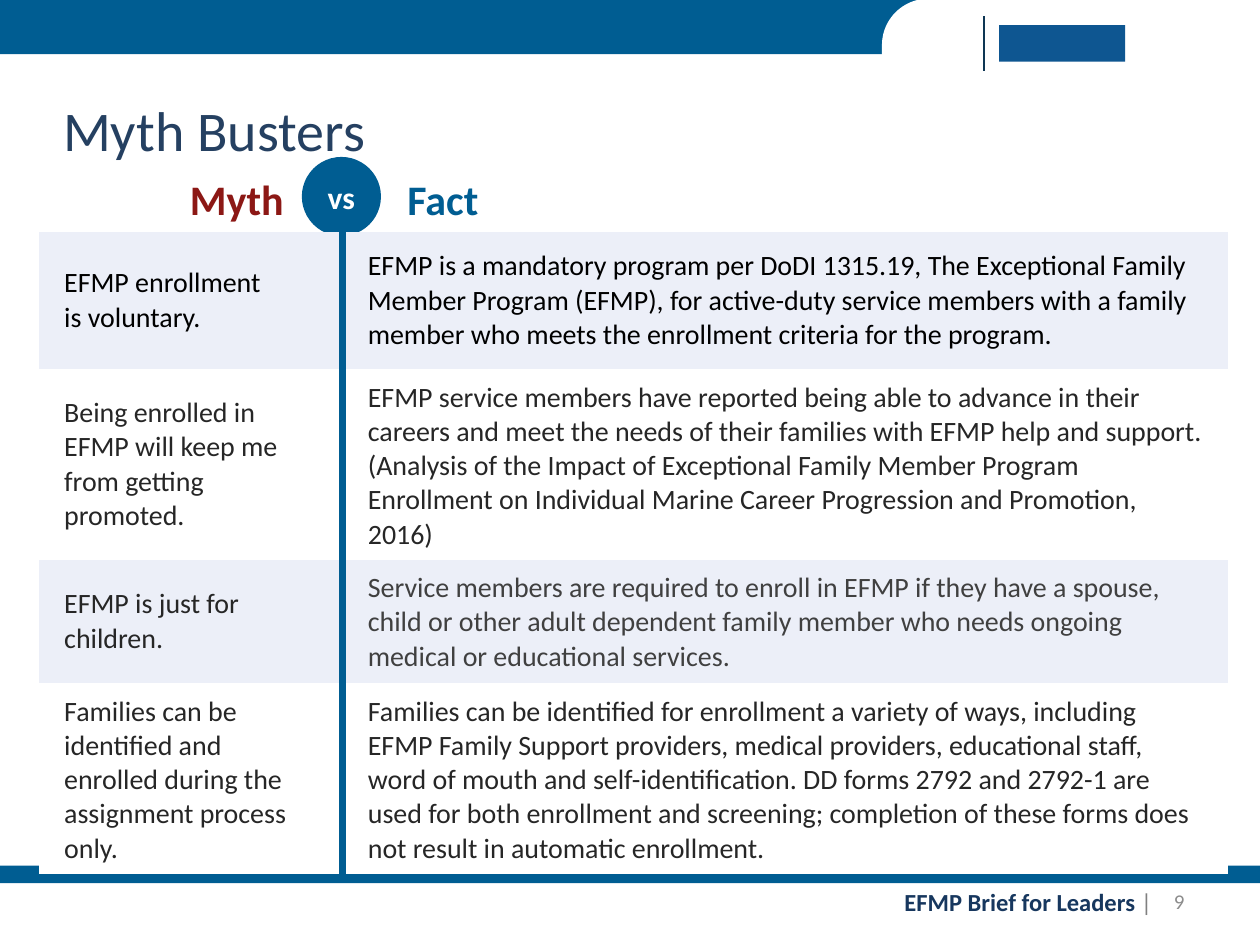
"""Build the Myth Busters slide: a two-column table of myths and facts."""
from dataclasses import dataclass
from typing import Optional

from lxml import etree
from pptx import Presentation
from pptx.dml.color import RGBColor
from pptx.enum import shapes, text
from pptx.oxml import ns
from pptx.util import Inches, Pt

BLUE = RGBColor(0x00, 0x5D, 0x92)
EMBLEM = RGBColor(0x0E, 0x56, 0x91)
EMBLEM_RULE = RGBColor(0x0E, 0x36, 0x54)
NAVY = RGBColor(0x25, 0x40, 0x61)
FOOTER_NAVY = RGBColor(0x17, 0x37, 0x5E)
RED = RGBColor(0x8C, 0x18, 0x15)
BAND = RGBColor(0xEC, 0xEF, 0xF8)
WHITE = RGBColor(0xFF, 0xFF, 0xFF)
BLACK = RGBColor(0x00, 0x00, 0x00)
INK = RGBColor(0x26, 0x26, 0x26)
SOFT_INK = RGBColor(0x40, 0x40, 0x40)
GRAY = RGBColor(0x80, 0x80, 0x80)
NUMBER_GRAY = RGBColor(0x8C, 0x8C, 0x8C)
FONT = "Calibri"
DIVIDER_WIDTH = Pt(4.5)


@dataclass
class Area:
    left: float
    top: float
    width: float
    height: float

    def lengths(self) -> tuple:
        return tuple(Inches(n) for n in (self.left, self.top, self.width, self.height))


@dataclass
class Entry:
    myth: list[str]
    fact: list[str]
    height: float
    myth_color: RGBColor = INK
    fact_color: RGBColor = INK


ENTRIES = [
    Entry(["EFMP enrollment \vis voluntary."],
          ["EFMP is a mandatory program per DoDI 1315.19, The Exceptional Family Member "
           "Program (EFMP), for active-duty service members with a family member who meets "
           "the enrollment criteria for the program."], 1.09, BLACK, BLACK),
    Entry(["Being enrolled in EFMP will keep me from getting promoted."],
          ["EFMP service members have reported being able to advance in their careers and "
           "meet the needs of their families with EFMP help and support.",
           "(Analysis of the Impact of Exceptional Family Member Program Enrollment on "
           "Individual Marine Career Progression and Promotion, 2016)"], 1.37),
    Entry(["EFMP is just for children."],
          ["Service members are required to enroll in EFMP if they have a spouse, child or "
           "other adult dependent family member who needs ongoing medical or educational "
           "services."], 0.93, fact_color=SOFT_INK),
    Entry(["Families can be identified and enrolled during the assignment process only."],
          ["Families can be identified for enrollment a variety of ways, including EFMP "
           "Family Support providers, medical providers, educational staff, word of mouth "
           "and self-identification. DD forms 2792 and 2792-1 are used for both enrollment "
           "and screening; completion of these forms does not result in automatic "
           "enrollment."], 1.43),
]


def add_span(para, words: str, size: float, color: RGBColor, bold: bool = False) -> None:
    span = para.add_run()
    span.text = words
    span.font.name = FONT
    span.font.size = Pt(size)
    span.font.bold = bold
    span.font.color.rgb = color


def add_block(page, kind, area: Area, fill: RGBColor):
    block = page.shapes.add_shape(kind, *area.lengths())
    block.shadow.inherit = False
    block.fill.solid()
    block.fill.fore_color.rgb = fill
    block.line.fill.background()
    return block


def add_rule(page, left: float, top: float, bottom: float, color: RGBColor, width: float) -> None:
    rule = page.shapes.add_connector(shapes.MSO_CONNECTOR.STRAIGHT, Inches(left), Inches(top),
                                     Inches(left), Inches(bottom))
    rule.line.color.rgb = color
    rule.line.width = Pt(width)
    etree.SubElement(rule._element.spPr, ns.qn("a:effectLst"))


def add_label(page, area: Area, align, grow: bool = True):
    box = page.shapes.add_textbox(*area.lengths())
    frame = box.text_frame
    frame.word_wrap = not grow
    if grow:
        frame.auto_size = text.MSO_AUTO_SIZE.SHAPE_TO_FIT_TEXT
    else:
        frame.vertical_anchor = text.MSO_ANCHOR.MIDDLE
    para = frame.paragraphs[0]
    para.alignment = align
    return para


def set_borders(cell, divider: str) -> None:
    properties = cell._tc.get_or_add_tcPr()
    for place, side in enumerate(("lnL", "lnR", "lnT", "lnB")):
        edge = etree.Element(ns.qn(f"a:{side}"))
        properties.insert(place, edge)
        if side == divider:
            edge.set("w", str(DIVIDER_WIDTH))
            fill = etree.SubElement(edge, ns.qn("a:solidFill"))
            etree.SubElement(fill, ns.qn("a:srgbClr"), val=str(BLUE))
        else:
            etree.SubElement(edge, ns.qn("a:noFill"))


def fill_cell(cell, paragraphs: list[str], color: RGBColor, fill: RGBColor, divider: str) -> None:
    cell.vertical_anchor = text.MSO_ANCHOR.MIDDLE
    cell.margin_left, cell.margin_right = Inches(0.2), Inches(0.19)
    cell.margin_top = cell.margin_bottom = Inches(0.09)
    cell.fill.solid()
    cell.fill.fore_color.rgb = fill
    set_borders(cell, divider)
    frame = cell.text_frame
    for index, words in enumerate(paragraphs):
        para = frame.add_paragraph() if index else frame.paragraphs[0]
        for number, line in enumerate(words.split("\v")):
            if number:
                para.add_line_break()
            add_span(para, line, 16, color)


def add_comparison(page, entries: list[Entry], area: Area, widths: tuple) -> None:
    table = page.shapes.add_table(len(entries), len(widths), *area.lengths()).table
    table.first_row = table.horz_banding = False
    for column, width in zip(table.columns, widths):
        column.width = Inches(width)
    for index, entry in enumerate(entries):
        table.rows[index].height = Inches(entry.height)
        fill = WHITE if index % 2 else BAND
        fill_cell(table.cell(index, 0), entry.myth, entry.myth_color, fill, "lnR")
        fill_cell(table.cell(index, 1), entry.fact, entry.fact_color, fill, "lnL")


def add_frame(page) -> None:
    kinds = shapes.MSO_SHAPE
    add_block(page, kinds.RECTANGLE, Area(0, 0, 10, 0.43), BLUE)
    add_block(page, kinds.RECTANGLE, Area(0, 6.87, 10, 0.14), BLUE)
    corner = add_block(page, kinds.ROUND_2_DIAG_RECTANGLE, Area(7, -0.01, 3, 1.6), WHITE)
    corner.adjustments[0], corner.adjustments[1] = 0.23, 0
    add_block(page, kinds.RECTANGLE, Area(7.93, 0.2, 1, 0.29), EMBLEM)
    add_rule(page, 7.81, 0.13, 0.56, EMBLEM_RULE, 1)
    footer = add_label(page, Area(7.08, 6.99, 2.23, 0.34), text.PP_ALIGN.LEFT)
    add_span(footer, "EFMP Brief for Leaders ", 14, FOOTER_NAVY, True)
    add_span(footer, "| ", 14, GRAY)


def add_title(page) -> None:
    title = page.shapes.title
    title.left, title.top, title.width, title.height = Area(0.4, 0.55, 9, 0.95).lengths()
    title.text_frame.vertical_anchor = text.MSO_ANCHOR.MIDDLE
    para = title.text_frame.paragraphs[0]
    para.alignment = text.PP_ALIGN.LEFT
    add_span(para, "Myth Busters", 32, NAVY)
    page.shapes._spTree.append(title._element)


def add_versus(page) -> None:
    circle = add_block(page, shapes.MSO_SHAPE.OVAL, Area(2.41, 1.26, 0.6, 0.6), BLUE)
    circle.line.color.rgb = BLUE
    circle.line.width = Pt(2)
    circle.text_frame.vertical_anchor = text.MSO_ANCHOR.MIDDLE
    circle.text_frame.margin_left = circle.text_frame.margin_right = 0
    para = circle.text_frame.paragraphs[0]
    para.alignment = text.PP_ALIGN.CENTER
    add_span(para, "vs", 18, WHITE, True)


def main() -> None:
    deck = Presentation()
    deck.slide_width, deck.slide_height = Inches(10), Inches(7.5)
    page = deck.slides.add_slide(deck.slide_layouts[5])
    add_frame(page)
    add_title(page)
    center = text.PP_ALIGN.CENTER
    add_span(add_label(page, Area(1.4, 1.33, 0.96, 0.5), center), "Myth", 24, RED, True)
    add_rule(page, 2.71, 1.62, 6.65, BLUE, 3.75)
    add_versus(page)
    add_span(add_label(page, Area(3.13, 1.33, 0.77, 0.5), center), "Fact", 24, BLUE, True)
    add_comparison(page, ENTRIES, Area(0.31, 1.84, 9.44, 4.82), (2.41, 7.03))
    number = add_label(page, Area(7.17, 6.95, 2.33, 0.4), text.PP_ALIGN.RIGHT, grow=False)
    add_span(number, "9", 12, NUMBER_GRAY)
    deck.save("out.pptx")


if __name__ == "__main__":
    main()
